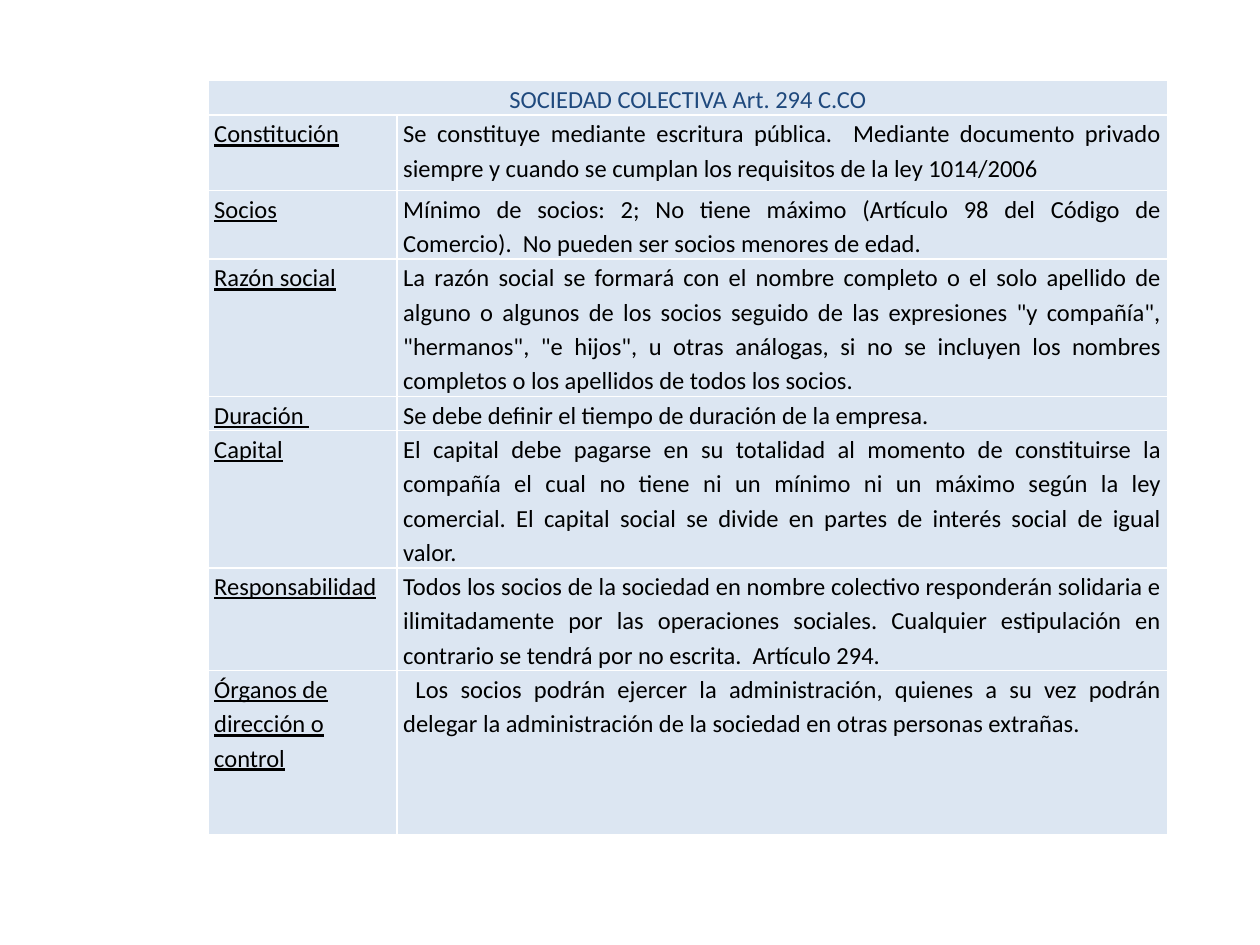
import pptx
import pptx.dml.color
import pptx.enum.text
import pptx.oxml
import pptx.oxml.ns
import pptx.util

Inches = pptx.util.Inches
Pt = pptx.util.Pt
ALIGN = pptx.enum.text.PP_ALIGN
COLORS = {"fill": "DCE6F2", "title": "1F497D", "text": "000000", "line": "FFFFFF"}
COLS = [1.5, 6.12]
HEAD = "SOCIEDAD COLECTIVA Art. 294 C.CO"
HEAD_H = 0.24

# Label, description, row height, space after the description
ROWS = [
    ("Constitución",
     "Se constituye mediante escritura pública.  Mediante documento privado "
     "siempre y cuando se cumplan los requisitos de la ley 1014/2006", 0.6, 0),
    ("Socios",
     "Mínimo de socios: 2; No tiene máximo (Artículo 98 del Código de "
     "Comercio).  No pueden ser socios menores de edad.", 0.39, 0),
    ("Razón social",
     "La razón social se formará con el nombre completo o el solo apellido de "
     "alguno o algunos de los socios seguido de las expresiones \"y compañía\", "
     "\"hermanos\", \"e hijos\", u otras análogas, si no se incluyen los nombres "
     "completos o los apellidos de todos los socios. ", 1, 7.5),
    ("Duración ", "Se debe definir el tiempo de duración de la empresa.", 0.19, 7.5),
    ("Capital",
     "El capital debe pagarse en su totalidad al momento de constituirse la "
     "compañía el cual no tiene ni un mínimo ni un máximo según la ley "
     "comercial. El capital social se divide en partes de interés social de "
     "igual valor. ", 0.8, 0),
    ("Responsabilidad",
     "Todos los socios de la sociedad en nombre colectivo responderán solidaria "
     "e ilimitadamente por las operaciones sociales. Cualquier estipulación en "
     "contrario se tendrá por no escrita.  Artículo 294. ", 0.6, 7.5),
    ("Órganos de dirección o control",
     " Los socios podrán ejercer la administración, quienes a su vez podrán "
     "delegar la administración de la sociedad en otras personas extrañas. ",
     1.3, 10),
]


def make_line(tag, color, width):
    return pptx.oxml.parse_xml(
        f'<a:{tag} {pptx.oxml.ns.nsdecls("a")} w="{Pt(width)}"><a:solidFill>'
        f'<a:srgbClr val="{COLORS[color]}"/></a:solidFill></a:{tag}>')


def style_cell(cell):
    props = cell._tc.get_or_add_tcPr()
    for side in "LRTB":
        props.append(make_line("ln" + side, "line", 1))
    cell.fill.solid()
    cell.fill.fore_color.rgb = pptx.dml.color.RGBColor.from_string(COLORS["fill"])
    cell.margin_left = cell.margin_right = Inches(0.05)
    cell.margin_top = cell.margin_bottom = 0


def put_text(cell, text, color="text", align=ALIGN.JUSTIFY, after=10,
             under=False, edge=None):
    para = cell.text_frame.paragraphs[0]
    para.alignment = align
    para.line_spacing = 1.15
    para.space_after = Pt(after)
    run = para.add_run()
    run.text = text
    font = run.font
    font.name, font.size, font.underline = "Calibri", Pt(14), under
    font.color.rgb = pptx.dml.color.RGBColor.from_string(COLORS[color])
    if edge:
        run._r.get_or_add_rPr().insert(0, make_line("ln", color, edge))


def add_grid(slide):
    heights = [HEAD_H] + [row[2] for row in ROWS]
    grid = slide.shapes.add_table(
        len(heights), len(COLS), Inches(1.65), Inches(0.64),
        Inches(sum(COLS)), Inches(sum(heights))).table
    grid.first_row = grid.horz_banding = False
    for col, width in zip(grid.columns, COLS):
        col.width = Inches(width)
    for row, height in zip(grid.rows, heights):
        row.height = Inches(height)
    for cell in grid.iter_cells():
        style_cell(cell)
    return grid


def main():
    deck = pptx.Presentation()
    deck.slide_width, deck.slide_height = Inches(10), Inches(7.5)
    slide = deck.slides.add_slide(deck.slide_layouts[6])
    grid = add_grid(slide)

    # Heading across both columns
    grid.cell(0, 0).merge(grid.cell(0, 1))
    put_text(grid.cell(0, 0), HEAD, color="title", align=ALIGN.CENTER, edge=0.83)

    # Labels and descriptions; the last label wraps, so it is left aligned
    for i, (label, text, _, after) in enumerate(ROWS, 1):
        align = ALIGN.LEFT if i == len(ROWS) else ALIGN.JUSTIFY
        put_text(grid.cell(i, 0), label, align=align, under=True)
        put_text(grid.cell(i, 1), text, after=after)
    deck.save("out.pptx")


if __name__ == "__main__":
    main()
